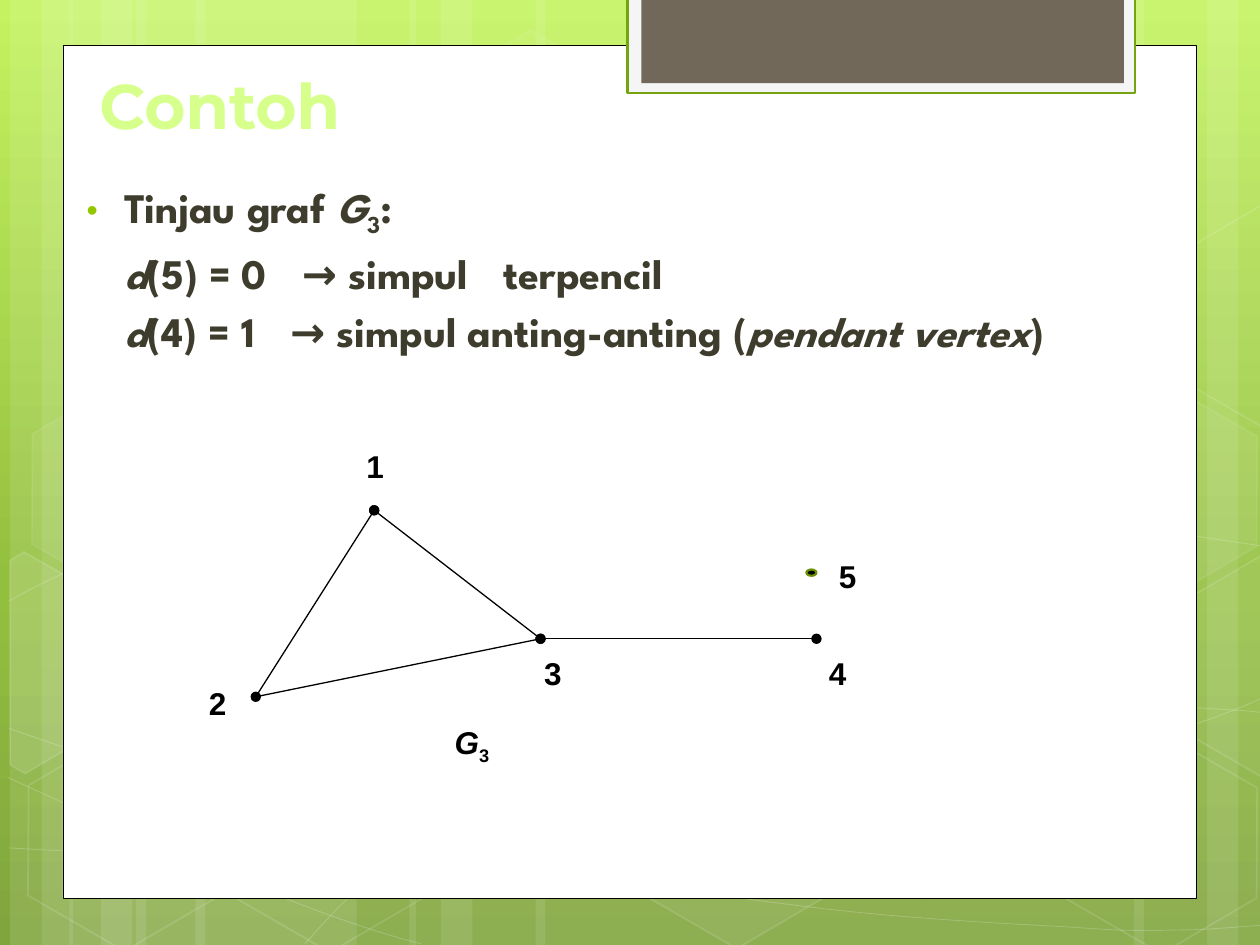
from lxml import etree
from pptx import Presentation
from pptx.dml.color import RGBColor
from pptx.enum.shapes import MSO_CONNECTOR, MSO_SHAPE
from pptx.enum.text import MSO_ANCHOR, MSO_AUTO_SIZE
from pptx.oxml.ns import qn
from pptx.util import Pt

PX = 9144  # EMU per px, 100 px to the inch
RECT, HEXAGON, OVAL = MSO_SHAPE.RECTANGLE, MSO_SHAPE.HEXAGON, MSO_SHAPE.OVAL
STRAIGHT = MSO_CONNECTOR.STRAIGHT
BOTTOM, TOP = MSO_ANCHOR.BOTTOM, MSO_ANCHOR.TOP
FIT, NO_FIT = MSO_AUTO_SIZE.SHAPE_TO_FIT_TEXT, MSO_AUTO_SIZE.NONE

WHITE, BLACK = RGBColor(255, 255, 255), RGBColor(0, 0, 0)
PALE, BROWN = RGBColor(0xF5, 0xF5, 0xF5), RGBColor(0x71, 0x68, 0x5A)
GREEN, DARK_GREEN = RGBColor(0x74, 0xA5, 0x10), RGBColor(0x6D, 0x92, 0x00)
LIME, BULLET = RGBColor(0xD6, 0xFF, 0x8C), RGBColor(0x94, 0xC6, 0x00)
INK = RGBColor(0x3E, 0x3D, 0x2D)
BACKGROUND = [(0, "C3F35F"), (62, "93BF3F"), (100, "81A53E")]

# Text: each span is (text, style), where style holds run attributes
PLAIN, ITALIC, SUB = {}, {"i": "1"}, {"baseline": "-25000"}
GAP = (" ", {"spc": "1370"})  # one space, widened
TITLE = [("Contoh", PLAIN)]
BODY = [
    [("Tinjau graf ", PLAIN), ("G", ITALIC), ("3", SUB), (":", PLAIN)],
    [("d", ITALIC), ("(5) = 0", PLAIN), GAP, ("→ simpul", PLAIN), GAP, ("terpencil", PLAIN)],
    [("d", ITALIC), ("(4) = 1", PLAIN), GAP, ("→ simpul anting-anting (", PLAIN),
     ("pendant vertex", ITALIC), (")", PLAIN)],
]
TITLE_FONT = {"name": "Montserrat", "size": Pt(36), "bold": True}
BODY_FONT = {"name": "League Spartan", "size": Pt(24), "bold": True}
LABEL_FONT = {"name": "Arial", "size": Pt(18), "bold": True}

# Graph: vertices, edges (from, to, dotted ends) and labels (spans, left, top, width)
VERTICES = {1: (297, 405), 2: (203, 553), 3: (429, 507), 4: (648, 507)}
EDGES = [(2, 1, True), (1, 3, True), (3, 2, False), (3, 4, True)]
LABELS = [([(str(number), PLAIN)], left, top, 34) for number, left, top in
          [(1, 281, 350), (2, 156, 538), (3, 422, 514), (4, 648, 514), (5, 656, 437)]]
LABELS.append(([("G", ITALIC), ("3", SUB)], 351, 569, 49))

# Backdrop
STRIPES = [(108, 175), (8, 50), (33, 83), (155, 175), (55, 50), (80, 83),
           (733, 175), (958, 50), (900, 83), (425, 308), (325, 50), (350, 83)]
CURVES = [  # start point, then groups of three Bezier points
    [(7, 673), (61, 676), (115, 679), (190, 678), (265, 677), (358, 675), (458, 665),
     (558, 655), (700, 636), (792, 617), (883, 598), (977, 568), (1007, 551)],
    [(7, 477), (36, 461), (65, 446), (121, 431), (178, 416), (259, 394), (347, 387),
     (436, 380), (544, 379), (654, 387), (764, 395), (947, 426), (1007, 434)],
    [(6, 617), (127, 672), (247, 727), (334, 749)],
    [(7, 578), (38, 589), (70, 600), (128, 616), (186, 631), (273, 656), (357, 673),
     (440, 690), (545, 708), (628, 718), (711, 729), (800, 733), (853, 736),
     (905, 740), (919, 738), (945, 738), (971, 737), (989, 735), (1007, 734)],
    [(242, 749), (260, 729), (278, 709), (302, 691), (326, 673), (360, 653), (388, 639),
     (416, 625), (433, 619), (470, 609), (506, 599), (573, 585), (608, 578),
     (644, 571), (649, 571), (680, 569), (711, 566), (760, 563), (794, 562),
     (829, 561), (886, 562), (886, 562), (908, 562), (931, 562), (953, 562),
     (971, 563), (988, 564), (997, 565), (1006, 566), (1003, 565), (1006, 566)],
]
HEXAGONS = [  # left, top, fill opacity, line opacity
    (334, 36, 4, 8), (497, 589, 6, 12), (11, 591, 0, 12), (14, 312, 7, 8), (174, 592, 0, 12),
    (753, 453, 10, 12), (834, 593, 0, 12), (834, 314, 7, 8)]
CUT_HEXAGONS = [  # points, fill opacity
    ([(8, 445), (19, 438), (96, 482), (95, 570), (20, 614), (8, 607)], 10),
    ([(926, 485), (1001, 441), (1009, 446), (1009, 613), (1002, 617), (926, 573)], 4),
    ([(926, 207), (1001, 163), (1010, 168), (1009, 335), (1002, 339), (926, 295)], 0)]
PANELS = [  # place, fill, line colour, line width
    ((50, 36, 900, 677), WHITE, BLACK, 0.5),
    ((498, -2, 403, 76), PALE, GREEN, 1.25),
    ((509, -2, 383, 68), BROWN, None, 0)]


def add_node(parent, tag, **attributes):
    return etree.SubElement(parent, qn(tag), attributes)


def set_opacity(holder, percent):
    for colour in holder.iter(qn("a:srgbClr")):
        add_node(colour, "a:alpha", val=str(percent * 1000))


def paint(shape, fill=None, fill_opacity=100, line=None, width=1, line_opacity=100):
    shape.shadow.inherit = False
    properties = shape._element.spPr
    if fill is None or not fill_opacity:
        shape.fill.background()
    else:
        shape.fill.solid()
        shape.fill.fore_color.rgb = fill
        if fill_opacity < 100:
            set_opacity(properties.find(qn("a:solidFill")), fill_opacity)
    if line is None:
        shape.line.fill.background()
        return
    shape.line.color.rgb = line
    shape.line.width = Pt(width)
    if line_opacity < 100:
        set_opacity(properties.find(qn("a:ln")), line_opacity)


def add_preset(page, kind, place, **look):
    shape = page.shapes.add_shape(kind, *(PX * value for value in place))
    paint(shape, **look)
    return shape


def add_outline(page, points, closed, **look):
    builder = page.shapes.build_freeform(*points[0], scale=PX)
    builder.add_line_segments(points[1:], close=closed)
    shape = builder.convert_to_shape()
    paint(shape, **look)
    return shape


def bend(shape):
    """Join each three straight segments into one Bezier curve."""
    segments = list(shape._element.iter(qn("a:lnTo")))
    for first in range(0, len(segments), 3):
        curve = etree.Element(qn("a:cubicBezTo"))
        segments[first].addprevious(curve)
        for segment in segments[first:first + 3]:
            curve.append(segment[0])
            segment.getparent().remove(segment)


def add_box(page, place, wrap, anchor=TOP, fit=NO_FIT):
    frame = page.shapes.add_textbox(*(PX * value for value in place)).text_frame
    frame.word_wrap, frame.vertical_anchor, frame.auto_size = wrap, anchor, fit
    return frame


def write(para, spans, font, colour):
    for text, style in spans:
        span = para.add_run()
        span.text = text
        for name, value in font.items():
            setattr(span.font, name, value)
        span.font.color.rgb = colour
        for name, value in style.items():
            span._r.get_or_add_rPr().set(name, value)


def add_backdrop(page):
    fill = page.background.fill
    fill.gradient()
    fill.gradient_angle = 270
    stops = page._element.find(".//" + qn("a:gsLst"))
    for stop in list(stops):
        stops.remove(stop)
    for position, colour in BACKGROUND:
        stop = add_node(stops, "a:gs", pos=str(position * 1000))
        add_node(stop, "a:srgbClr", val=colour)
    for left, width in STRIPES:
        add_preset(page, RECT, (left, 0, width, 750), fill=WHITE, fill_opacity=10)
    for points in CURVES:
        bend(add_outline(page, points, False, line=WHITE, width=0.5, line_opacity=20))
    for left, top, opacity, line_opacity in HEXAGONS:
        shape = add_preset(page, HEXAGON, (left, top, 175, 152), fill=WHITE,
                           fill_opacity=opacity, line=WHITE, line_opacity=line_opacity)
        shape.adjustments[0], shape.adjustments[1] = 0.285, 1.155
        shape.rotation = 30
    for points, opacity in CUT_HEXAGONS:
        add_outline(page, points, True, fill=WHITE, fill_opacity=opacity,
                    line=WHITE, line_opacity=12)
    for place, colour, line, width in PANELS:
        add_preset(page, RECT, place, fill=colour, line=line, width=width)


def add_text(page):
    frame = add_box(page, (69, 76, 768, 42), True, BOTTOM)
    write(frame.paragraphs[0], TITLE, TITLE_FONT, LIME)
    frame = add_box(page, (51, 139, 900, 262), True)
    for index, spans in enumerate(BODY):
        para = frame.add_paragraph() if index else frame.paragraphs[0]
        layout = para._p.get_or_add_pPr()
        layout.set("marL", str(38 * PX))
        layout.set("indent", str(0 if index else -30 * PX))
        add_node(add_node(layout, "a:spcBef"), "a:spcPct", val="20000")
        if index == 0:
            add_node(add_node(layout, "a:buClr"), "a:srgbClr", val=str(BULLET))
            add_node(layout, "a:buSzPct", val="76000")
            add_node(layout, "a:buFont", typeface="Arial")
            add_node(layout, "a:buChar", char="•")
        write(para, spans, BODY_FONT, INK)


def add_graph(page):
    for start, end, dotted in EDGES:
        points = VERTICES[start] + VERTICES[end]
        edge = page.shapes.add_connector(STRAIGHT, *(PX * value for value in points))
        edge.line.color.rgb = BLACK
        edge.line.width = Pt(0.75)
        if dotted:
            for tag in ("a:headEnd", "a:tailEnd"):
                add_node(edge.line._get_or_add_ln(), tag, type="oval")
        add_node(edge._element.spPr, "a:effectLst")
    add_preset(page, OVAL, (640, 452, 8, 5), fill=BLACK, line=DARK_GREEN, width=1.25)
    for spans, left, top, width in LABELS:
        frame = add_box(page, (left, top, width, 40), False, fit=FIT)
        write(frame.paragraphs[0], spans, LABEL_FONT, BLACK)


def main():
    deck = Presentation()
    deck.slide_width, deck.slide_height = 1000 * PX, 750 * PX
    page = deck.slides.add_slide(deck.slide_layouts[6])
    add_backdrop(page)
    add_text(page)
    add_graph(page)
    deck.save("out.pptx")


if __name__ == "__main__":
    main()
